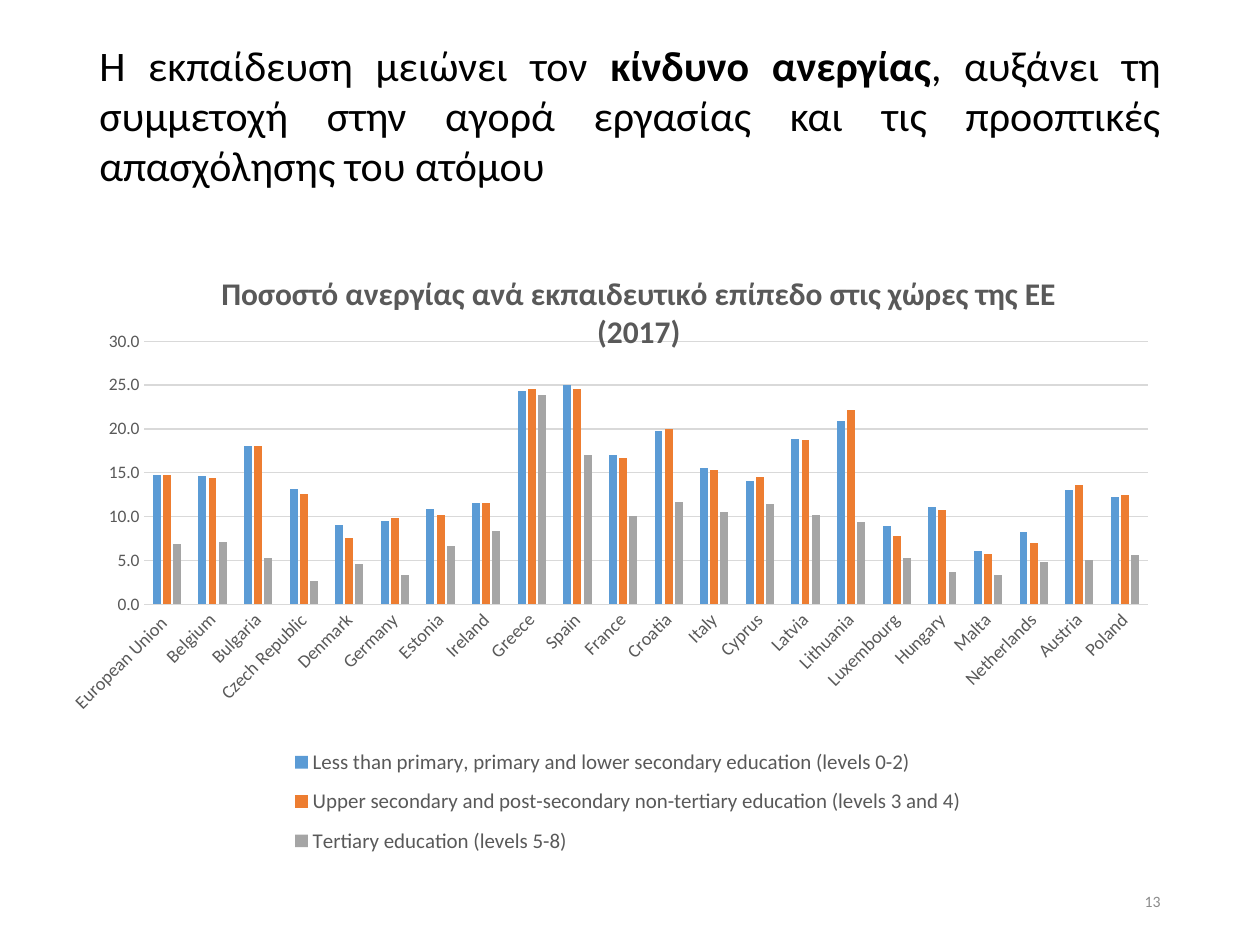
from dataclasses import dataclass
from typing import Optional

from lxml import etree
from pptx import Presentation
from pptx import util as u
from pptx.chart import data as chart_data
from pptx.dml import color
from pptx.enum import chart as ch
from pptx.enum import text
from pptx.oxml import ns

FONT = "Calibri"
COLORS = {
    "title": "000000",
    "label": "595959",
    "grid": "D9D9D9",
    "number": "8C8C8C",
}
CATEGORIES = [
    "European Union ", "Belgium", "Bulgaria", "Czech Republic", "Denmark", "Germany",
    "Estonia", "Ireland", "Greece", "Spain", "France", "Croatia", "Italy", "Cyprus",
    "Latvia", "Lithuania", "Luxembourg", "Hungary", "Malta", "Netherlands", "Austria",
    "Poland",
]


@dataclass
class Series:
    name: str
    color: str
    values: list[float]


@dataclass
class TextBlock:
    box: tuple[float, float, float, float]
    runs: list[tuple[str, bool]]
    size: float
    color: str
    align: text.PP_ALIGN


SERIES = [
    Series("Less than primary, primary and lower secondary education (levels 0-2)", "5B9BD5",
           [14.7, 14.6, 18.1, 13.1, 9, 9.5, 10.9, 11.6, 24.3, 25, 17,
            19.8, 15.5, 14.1, 18.8, 20.9, 8.9, 11.1, 6.1, 8.3, 13, 12.2]),
    Series("Upper secondary and post-secondary non-tertiary education (levels 3 and 4)", "ED7D31",
           [14.7, 14.4, 18.1, 12.6, 7.6, 9.9, 10.2, 11.6, 24.6, 24.5, 16.7,
            20, 15.3, 14.5, 18.7, 22.1, 7.8, 10.8, 5.7, 7, 13.6, 12.5]),
    Series("Tertiary education (levels 5-8)", "A5A5A5",
           [6.9, 7.1, 5.3, 2.7, 4.6, 3.3, 6.7, 8.4, 23.9, 17, 10.1,
            11.7, 10.5, 11.4, 10.2, 9.4, 5.3, 3.7, 3.3, 4.8, 5.1, 5.6]),
]
TEXTS = [
    TextBlock((0.69, 0.4, 8.62, 1.02),
              [("Η εκπαίδευση μειώνει τον ", False),
               ("κίνδυνο ανεργίας", True),
               (", αυξάνει τη συμμετοχή στην αγορά εργασίας και τις προοπτικές "
                "απασχόλησης του ατόμου", False)],
              24, "title", text.PP_ALIGN.JUSTIFY),
    TextBlock((7.06, 6.95, 2.25, 0.4), [("13", False)], 9, "number", text.PP_ALIGN.RIGHT),
]


def rgb(value: str) -> color.RGBColor:
    return color.RGBColor.from_string(value)


def set_attributes(target, values: dict) -> None:
    for name, value in values.items():
        setattr(target, name, value)


def style_font(font, size: float, key: str, bold: bool = False) -> None:
    set_attributes(font, {"name": FONT, "size": u.Pt(size), "bold": bold})
    font.color.rgb = rgb(COLORS[key])


def style_line(line, key: str) -> None:
    line.color.rgb = rgb(COLORS[key])
    line.width = u.Pt(0.75)


def add_text(s, block: TextBlock) -> None:
    sp = s.shapes.add_textbox(*map(u.Inches, block.box))
    tf = sp.text_frame
    set_attributes(tf, {"word_wrap": True, "vertical_anchor": text.MSO_ANCHOR.MIDDLE})
    p = tf.paragraphs[0]
    p.alignment = block.align
    for words, bold in block.runs:
        r = p.add_run()
        r.text = words
        style_font(r.font, block.size, block.color, bold)


def place(element, x: float, y: float, w: Optional[float] = None,
          h: Optional[float] = None, inner: bool = False) -> None:
    for old in element.findall(ns.qn("c:layout")):
        element.remove(old)
    layout = etree.Element(ns.qn("c:layout"))
    manual = etree.SubElement(layout, ns.qn("c:manualLayout"))
    values = {"layoutTarget": "inner" if inner else None, "xMode": "edge",
              "yMode": "edge", "x": x, "y": y, "w": w, "h": h}
    for name, value in values.items():
        if value is not None:
            etree.SubElement(manual, ns.qn(f"c:{name}")).set("val", str(value))
    before = [child for child in element
              if child.tag in (ns.qn("c:tx"), ns.qn("c:legendPos"))]
    element.insert(len(before), layout)


def style_axes(chart) -> None:
    cat, val = chart.category_axis, chart.value_axis
    for axis in (cat, val):
        set_attributes(axis, {"major_tick_mark": ch.XL_TICK_MARK.NONE,
                              "minor_tick_mark": ch.XL_TICK_MARK.NONE})
    style_font(cat.tick_labels.font, 10.5, "label")
    style_font(val.tick_labels.font, 10, "label")
    style_line(cat.format.line, "grid")
    body = cat._element.find(ns.qn("c:txPr")).find(ns.qn("a:bodyPr"))
    body.set("rot", "-2700000")
    body.set("vert", "horz")
    set_attributes(val, {"minimum_scale": 0, "maximum_scale": 30, "major_unit": 5,
                         "has_major_gridlines": True})
    set_attributes(val.tick_labels, {"number_format": "#,##0.0",
                                     "number_format_is_linked": False})
    val.format.line.fill.background()
    style_line(val.major_gridlines.format.line, "grid")


def add_unemployment_chart(s) -> None:
    data = chart_data.CategoryChartData(number_format="#,##0.0")
    data.categories = CATEGORIES
    for series in SERIES:
        data.add_series(series.name, series.values)
    box = map(u.Inches, (0.56, 1.9, 8.75, 5.25))
    chart = s.shapes.add_chart(ch.XL_CHART_TYPE.COLUMN_CLUSTERED, *box, data).chart
    style_font(chart.font, 10, "title")
    set_attributes(chart, {"has_title": True, "has_legend": True})

    p = chart.chart_title.text_frame.paragraphs[0]
    r = p.add_run()
    r.text = "Ποσοστό ανεργίας ανά εκπαιδευτικό επίπεδο στις χώρες της ΕΕ (2017)"
    style_font(r.font, 18, "label", True)
    place(chart.chart_title._element, 0.13, 0.04)

    plot = chart.plots[0]
    set_attributes(plot, {"gap_width": 219, "overlap": -27, "vary_by_categories": False})
    for bars, series in zip(plot.series, SERIES):
        bars.format.fill.solid()
        bars.format.fill.fore_color.rgb = rgb(series.color)
        bars.invert_if_negative = False
    style_axes(chart)
    plot_area = chart._chartSpace.find(".//" + ns.qn("c:plotArea"))
    place(plot_area, 0.065, 0.154, 0.912, 0.398, inner=True)

    legend = chart.legend
    set_attributes(legend, {"position": ch.XL_LEGEND_POSITION.BOTTOM,
                            "include_in_layout": False})
    style_font(legend.font, 12, "label")
    place(legend._element, 0.19, 0.75, 0.63, 0.2)


def main() -> None:
    prs = Presentation()
    set_attributes(prs, {"slide_width": u.Inches(10), "slide_height": u.Inches(7.5)})
    s = prs.slides.add_slide(prs.slide_layouts[6])
    add_unemployment_chart(s)
    for block in TEXTS:
        add_text(s, block)
    prs.save("out.pptx")


if __name__ == "__main__":
    main()
